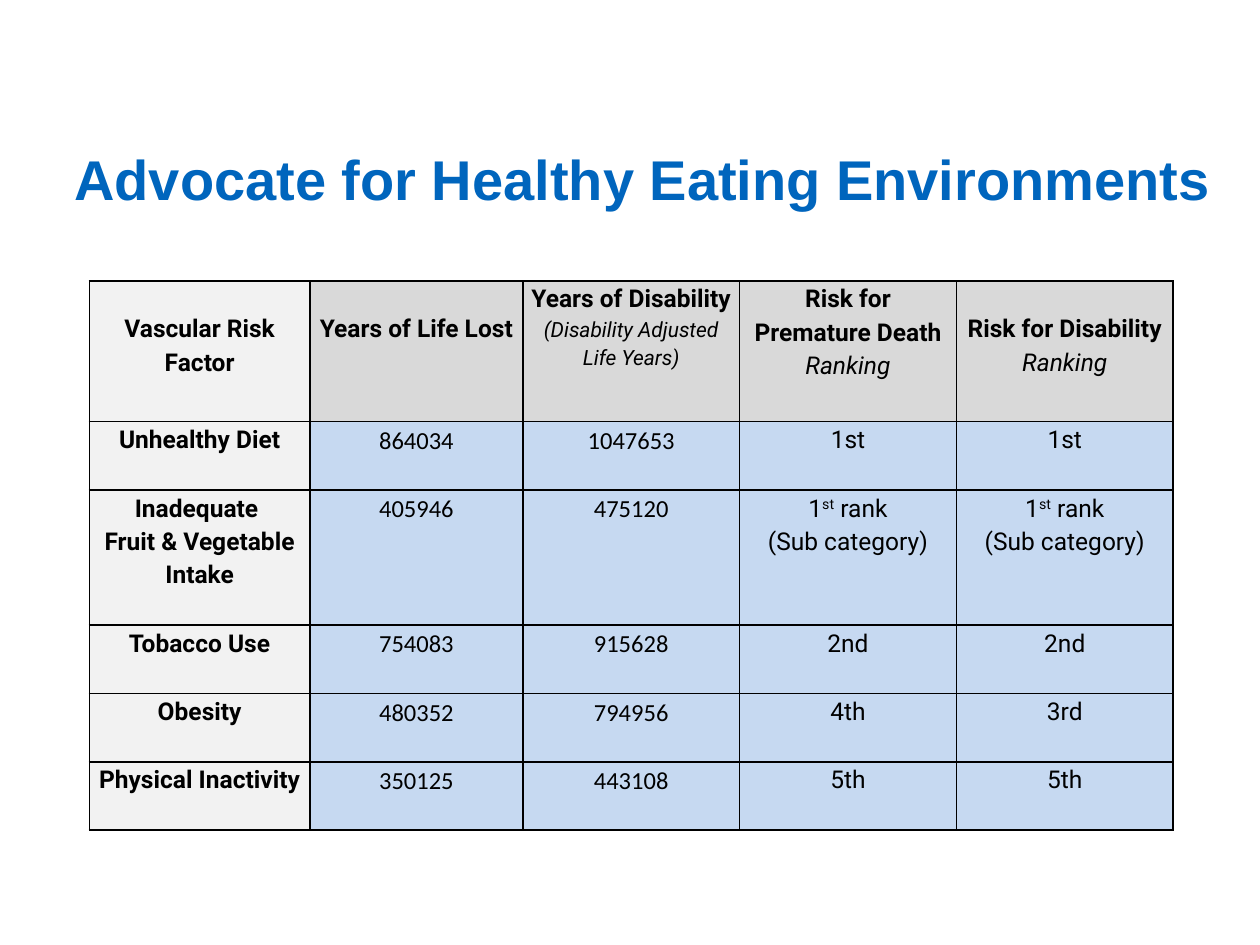
import pptx
import pptx.dml.color
import pptx.enum.text
import pptx.util
from dataclasses import dataclass
from lxml import etree
from pptx.oxml.ns import qn

Cm = pptx.util.Cm
Pt = pptx.util.Pt


@dataclass(frozen=True)
class Theme:
    title_color: str = "0065BD"
    text_color: str = "000000"
    border_color: str = "000000"
    factor_fill: str = "F2F2F2"
    header_fill: str = "D9D9D9"
    value_fill: str = "C6D9F1"
    title_font: str = "Arial"
    body_font: str = "Roboto"
    number_font: str = "Calibri"
    title_size: int = 32
    body_size: int = 14
    note_size: int = 12


THEME = Theme()

COLUMN_WIDTHS = [4.45, 4.29, 4.37, 4.37, 4.37]
ROW_HEIGHTS = [2.84, 1.38, 2.72, 1.38, 1.38, 1.38]

# Header cells: bold label, italic note, note size, top margin in cm
HEADERS = [
    ("Vascular Risk Factor", None, None, 0.6),
    ("Years of Life Lost", None, None, 0.6),
    ("Years of Disability", "(Disability Adjusted Life Years)", THEME.note_size, 0),
    ("Risk for Premature Death", "Ranking", THEME.body_size, 0),
    ("Risk for Disability", "Ranking", THEME.body_size, 0.6),
]

# A line break starts a new paragraph; text between carets is superscript
SUB_RANK = "1^st^ rank\n(Sub category)"
ROWS = [
    ("Unhealthy Diet", "864034", "1047653", "1st", "1st"),
    ("Inadequate \nFruit & Vegetable Intake", "405946", "475120", SUB_RANK, SUB_RANK),
    ("Tobacco Use", "754083", "915628", "2nd", "2nd"),
    ("Obesity", "480352", "794956", "4th", "3rd"),
    ("Physical Inactivity", "350125", "443108", "5th", "5th"),
]


def rgb(value):
    return pptx.dml.color.RGBColor.from_string(value)


def style_font(font, name, size, color, bold=False, italic=False):
    font.name = name
    font.size = Pt(size)
    font.color.rgb = rgb(color)
    font.bold = bold
    font.italic = italic


def add_title(slide, text):
    shape = slide.shapes.add_textbox(Cm(0), Cm(2), Cm(25), Cm(3.18))
    frame = shape.text_frame
    frame.word_wrap = True
    frame.margin_left = Cm(1.5)
    frame.vertical_anchor = pptx.enum.text.MSO_ANCHOR.MIDDLE
    paragraph = frame.paragraphs[0]
    paragraph.text = text
    style_font(paragraph.font, THEME.title_font, THEME.title_size,
               THEME.title_color, bold=True)


def set_borders(cell):
    properties = cell._tc.get_or_add_tcPr()
    for side in ("a:lnL", "a:lnR", "a:lnT", "a:lnB"):
        line = etree.SubElement(properties, qn(side), w=str(Pt(1)))
        fill = etree.SubElement(line, qn("a:solidFill"))
        etree.SubElement(fill, qn("a:srgbClr"), val=THEME.border_color)


def fill_cell(cell, lines, fill, top=0):
    """Each line is (text, font name, size, bold, italic)."""
    set_borders(cell)
    cell.fill.solid()
    cell.fill.fore_color.rgb = rgb(fill)
    cell.margin_left = cell.margin_right = Cm(0.15)
    cell.margin_top, cell.margin_bottom = Cm(top), Cm(0)
    frame = cell.text_frame
    for index, (text, name, size, bold, italic) in enumerate(lines):
        paragraph = frame.add_paragraph() if index else frame.paragraphs[0]
        paragraph.alignment = pptx.enum.text.PP_ALIGN.CENTER
        paragraph.line_spacing = 1.15
        style_font(paragraph.font, name, size, THEME.text_color, bold, italic)
        for position, piece in enumerate(text.split("^")):
            run = paragraph.add_run()
            run.text = piece
            if position % 2:
                run._r.get_or_add_rPr().set("baseline", "30000")


def add_risk_table(slide):
    shape = slide.shapes.add_table(
        len(ROW_HEIGHTS), len(COLUMN_WIDTHS), Cm(1.8), Cm(5.66),
        Cm(sum(COLUMN_WIDTHS)), Cm(sum(ROW_HEIGHTS)))
    table = shape.table
    table.first_row = table.horz_banding = False
    for column, width in zip(table.columns, COLUMN_WIDTHS):
        column.width = Cm(width)
    for row, height in zip(table.rows, ROW_HEIGHTS):
        row.height = Cm(height)

    # Header row
    for column, (label, note, note_size, top) in enumerate(HEADERS):
        lines = [(label, THEME.body_font, THEME.body_size, True, False)]
        if note:
            lines.append((note, THEME.body_font, note_size, False, True))
        fill = THEME.header_fill if column else THEME.factor_fill
        fill_cell(table.cell(0, column), lines, fill, top)

    # Risk factors, years and rankings
    for row, values in enumerate(ROWS, start=1):
        for column, value in enumerate(values):
            name = THEME.number_font if column in (1, 2) else THEME.body_font
            lines = [(text, name, THEME.body_size, column == 0, False)
                     for text in value.split("\n")]
            fill = THEME.value_fill if column else THEME.factor_fill
            fill_cell(table.cell(row, column), lines, fill)


def main():
    presentation = pptx.Presentation()
    presentation.slide_width = Cm(25.4)
    presentation.slide_height = Cm(19.05)
    slide = presentation.slides.add_slide(presentation.slide_layouts[6])
    add_title(slide, "Advocate for Healthy Eating Environments")
    add_risk_table(slide)
    presentation.save("out.pptx")


if __name__ == "__main__":
    main()
